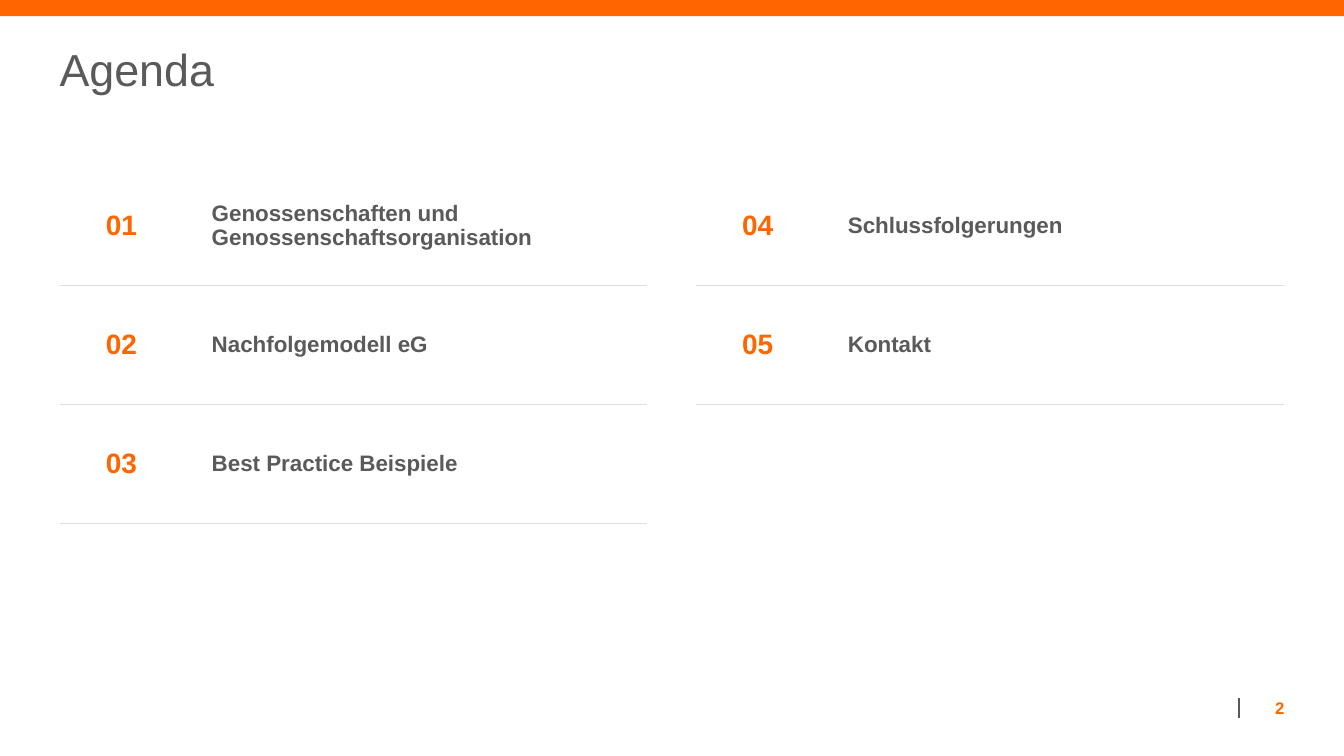
from lxml import etree
from pptx import Presentation
from pptx.dml.color import RGBColor
from pptx.enum.shapes import MSO_CONNECTOR, MSO_SHAPE
from pptx.enum.text import MSO_ANCHOR, PP_ALIGN
from pptx.oxml import parse_xml
from pptx.oxml.ns import nsdecls, qn
from pptx.util import Inches, Pt

ORANGE = RGBColor(0xFF, 0x66, 0x00)
GREY = RGBColor(0x5A, 0x5A, 0x5A)
RULE = RGBColor(0xDE, 0xDE, 0xDE)
WHITE = RGBColor(0xFF, 0xFF, 0xFF)
LEFT, CENTER, RIGHT = PP_ALIGN.LEFT, PP_ALIGN.CENTER, PP_ALIGN.RIGHT
TOP, MIDDLE, BOTTOM = MSO_ANCHOR.TOP, MSO_ANCHOR.MIDDLE, MSO_ANCHOR.BOTTOM

ROWS = 3
ROW_HEIGHT = 1.18
COLUMN_WIDTHS = (1.23, 4.6)
TABLE_LEFTS = (0.59, 6.9)
TOPICS = [
    "Genossenschaften und Genossenschaftsorganisation",
    "Nachfolgemodell eG",
    "Best Practice Beispiele",
    "Schlussfolgerungen",
    "Kontakt",
]


def add_text(p, text, size, color, bold=False, align=LEFT):
    p.alignment = align
    r = p.add_run()
    r.text = text
    r.font.name = "Arial"
    r.font.size = Pt(size)
    r.font.bold = bold
    r.font.color.rgb = color


def add_box(left, top, width, height, anchor, right_inset=0):
    """Add an empty wrapping text box and return its first paragraph."""
    tf = s.shapes.add_textbox(Inches(left), Inches(top), Inches(width), Inches(height)).text_frame
    tf.word_wrap = True
    tf.vertical_anchor = anchor
    tf.margin_left = tf.margin_top = tf.margin_bottom = 0
    tf.margin_right = Inches(right_inset)
    return tf.paragraphs[0]


prs = Presentation()
prs.slide_width = Inches(13.33)
prs.slide_height = Inches(7.5)
s = prs.slides.add_slide(prs.slide_layouts[6])

# Top band and footer divider
band = s.shapes.add_shape(MSO_SHAPE.RECTANGLE, 0, 0, prs.slide_width, Inches(0.16))
band.shadow.inherit = False
band.fill.solid()
band.fill.fore_color.rgb = ORANGE
band.line.fill.background()

divider = s.shapes.add_connector(
    MSO_CONNECTOR.STRAIGHT, Inches(12.29), Inches(7.12), Inches(12.29), Inches(6.92))
divider.line.color.rgb = GREY
divider.line.width = Pt(1)
etree.SubElement(divider._element.spPr, qn("a:effectLst"))

# Title
p = add_box(0.59, 0.47, 12.15, 0.59, TOP, right_inset=2.95)
p.line_spacing = 0.9
add_text(p, "Agenda", 32, GREY)

# Agenda tables, with a rule under each topic
for t, left in enumerate(TABLE_LEFTS):
    table = s.shapes.add_table(
        ROWS, 2, Inches(left), Inches(1.65),
        Inches(sum(COLUMN_WIDTHS)), Inches(ROWS * ROW_HEIGHT)).table
    table.first_row = table.horz_banding = False
    for column, width in zip(table.columns, COLUMN_WIDTHS):
        column.width = Inches(width)
    for i, row in enumerate(table.rows):
        row.height = Inches(ROW_HEIGHT)
        index = t * ROWS + i
        has_topic = index < len(TOPICS)
        ruled = {"lnL": False, "lnR": False, "lnT": i > 0, "lnB": has_topic}
        for cell in row.cells:
            tcPr = cell._tc.get_or_add_tcPr()
            for edge, visible in ruled.items():
                paint = (f'<a:solidFill><a:srgbClr val="{RULE}"/></a:solidFill>'
                         if visible else "<a:noFill/>")
                tcPr.append(parse_xml(
                    f'<a:{edge} {nsdecls("a")} w="{Pt(1)}">{paint}</a:{edge}>'))
            cell.fill.solid()
            cell.fill.fore_color.rgb = WHITE
            cell.vertical_anchor = MIDDLE
            cell.margin_left = cell.margin_right = 0
            cell.margin_top = cell.margin_bottom = 0
        if has_topic:
            number, topic = row.cells
            topic.margin_left = Inches(0.28)
            topic.margin_right = Inches(0.12)
            add_text(number.text_frame.paragraphs[0], f"{index + 1:02}", 20, ORANGE, True, CENTER)
            add_text(topic.text_frame.paragraphs[0], TOPICS[index], 16, GREY, True)

# Page number
p = add_box(12.42, 6.8, 0.32, 0.32, BOTTOM)
add_text(p, "2", 12, ORANGE, True, RIGHT)

prs.save("out.pptx")
